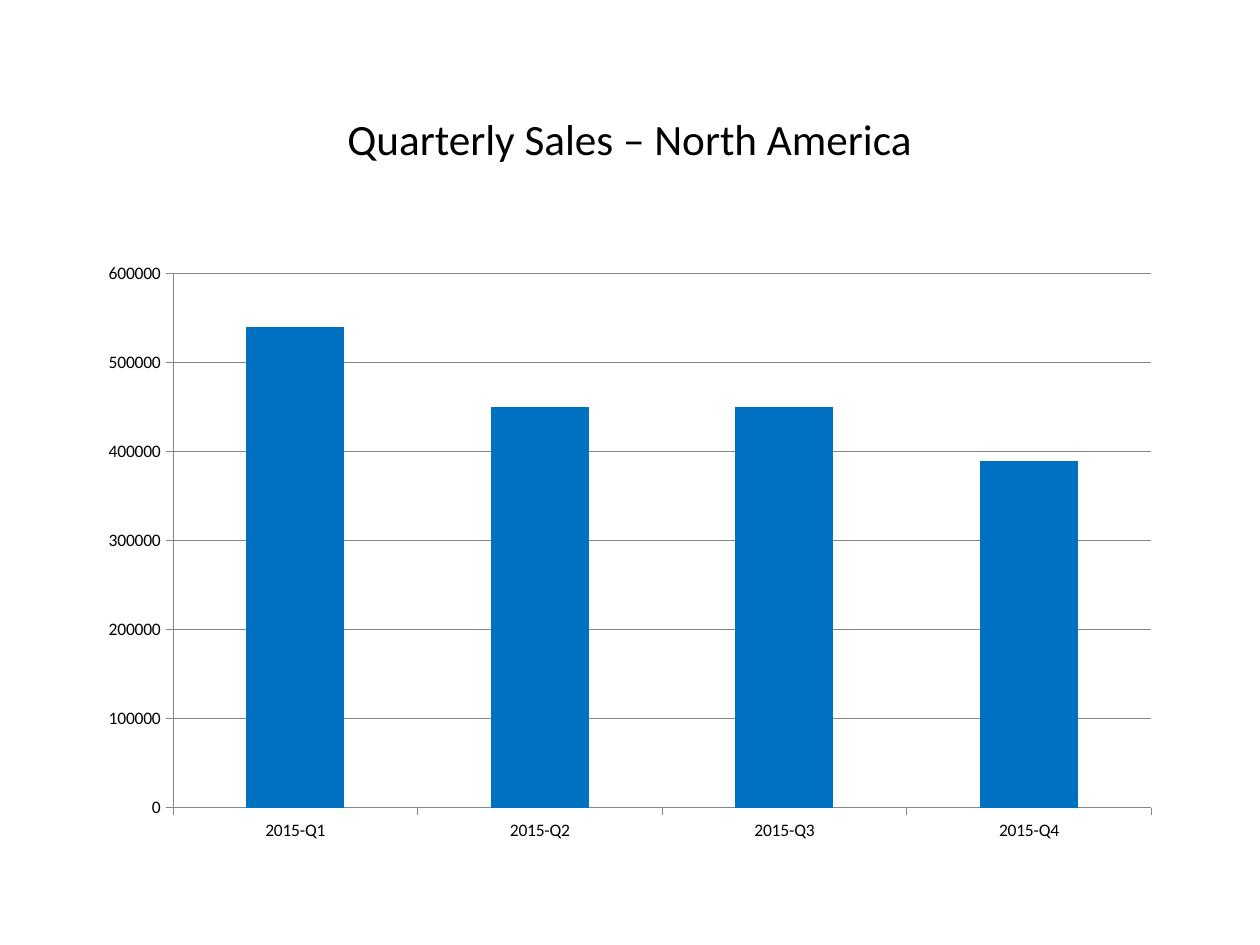
from dataclasses import dataclass

from pptx import Presentation
from pptx import util as u
from pptx.chart import data
from pptx.dml.color import RGBColor
from pptx.enum import chart as ch, text

PX = u.Inches(1) // 126


@dataclass(frozen=True)
class Theme:
    font: str = "Calibri"
    ink: str = "000000"
    bar: str = "0070C0"
    grid: str = "878787"
    page: str = "FFFFFF"
    head: float = 24.7
    label: float = 10


class Deck:
    def __init__(self, theme, wide, high):
        self.theme = theme
        self.prs = Presentation()
        self.prs.slide_width, self.prs.slide_height = wide * PX, high * PX
        self.slide = self.prs.slides.add_slide(self.prs.slide_layouts[6])
        self.paint(self.slide.background.fill, theme.page)

    def paint(self, fill, color):
        fill.solid()
        fill.fore_color.rgb = RGBColor.from_string(color)

    def type(self, font, size):
        font.name, font.size = self.theme.font, u.Pt(size)
        font.color.rgb = RGBColor.from_string(self.theme.ink)

    def rule(self, line):
        """Give an axis or grid line its thin grey stroke."""
        line.width = u.Pt(0.5)
        line.color.rgb = RGBColor.from_string(self.theme.grid)

    def title(self, words, *box):
        frame = self.slide.shapes.add_textbox(*(n * PX for n in box)).text_frame
        frame.word_wrap = True
        frame.vertical_anchor = text.MSO_ANCHOR.MIDDLE
        para = frame.paragraphs[0]
        para.alignment = text.PP_ALIGN.CENTER
        para.line_spacing = 0.9
        run = para.add_run()
        run.text = words
        self.type(run.font, self.theme.head)

    def bars(self, name, sales, *box):
        table = data.CategoryChartData()
        table.categories = list(sales)
        table.add_series(name, list(sales.values()))
        chart = self.slide.shapes.add_chart(
            ch.XL_CHART_TYPE.COLUMN_CLUSTERED, *(n * PX for n in box), table
        ).chart
        chart.has_title = chart.has_legend = False
        self.type(chart.font, self.theme.label)

        plot = chart.plots[0]
        plot.gap_width = 150
        plot.vary_by_categories = False
        self.paint(plot.series[0].format.fill, self.theme.bar)

        for axis in (chart.category_axis, chart.value_axis):
            axis.major_tick_mark = ch.XL_TICK_MARK.OUTSIDE
            axis.minor_tick_mark = ch.XL_TICK_MARK.NONE
            self.rule(axis.format.line)
        scale = chart.value_axis
        scale.minimum_scale, scale.maximum_scale = 0, 600000
        scale.major_unit = 100000
        scale.has_major_gridlines = True
        self.rule(scale.major_gridlines.format.line)


def main():
    deck = Deck(Theme(), 1260, 945)
    left, wide = 87, 1086
    sales = {
        "2015-Q1": 540000,
        "2015-Q2": 450000,
        "2015-Q3": 450000,
        "2015-Q4": 390000,
    }
    deck.title("Quarterly Sales – North America", left, 50, wide, 183)
    deck.bars("Series 1", sales, left, 252, wide, 600)
    deck.prs.save("out.pptx")


if __name__ == "__main__":
    main()
